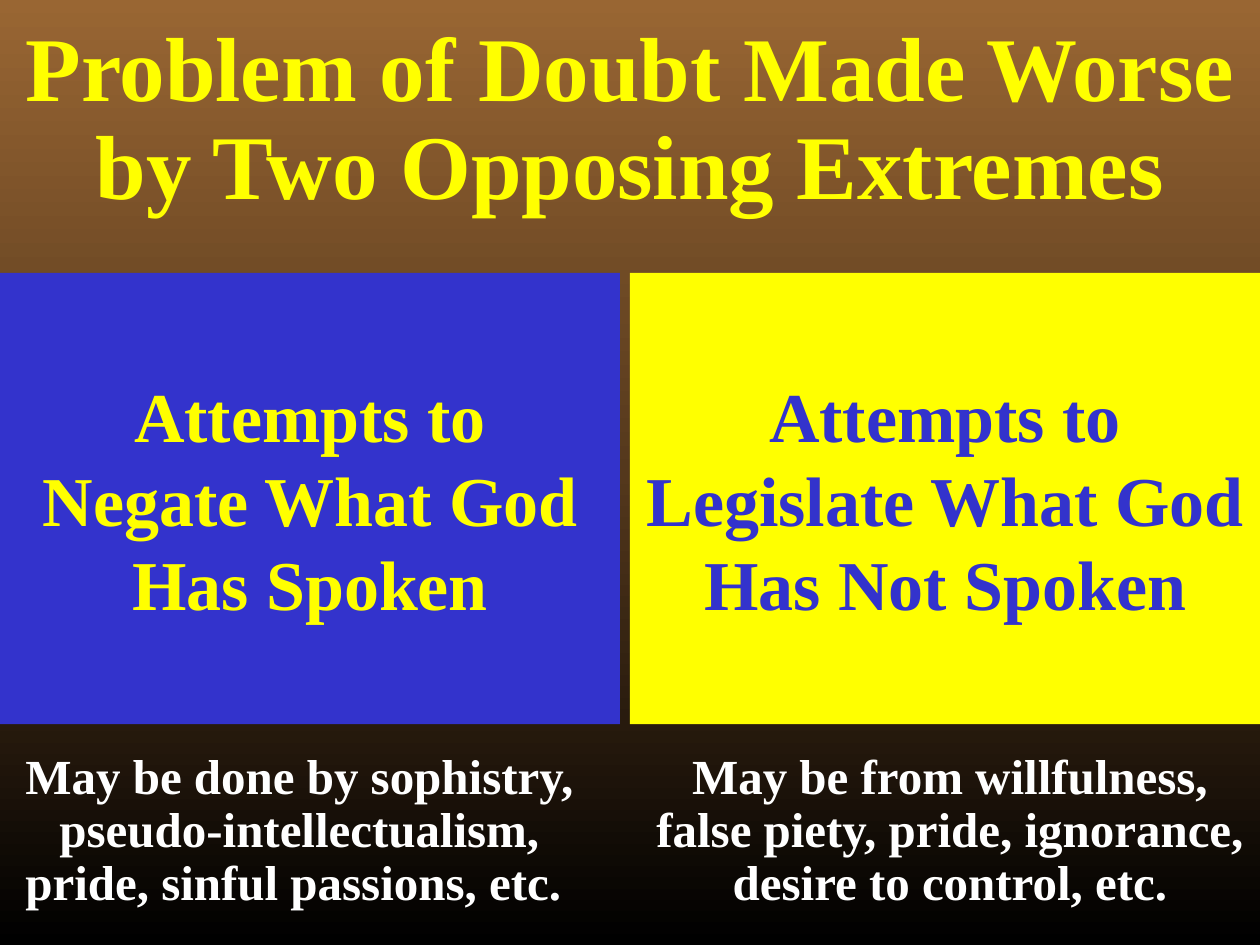
from copy import deepcopy

from lxml.etree import fromstring
from pptx import Presentation
from pptx.dml.color import RGBColor
from pptx.enum.shapes import MSO_SHAPE
from pptx.enum.text import MSO_ANCHOR, MSO_AUTO_SIZE, PP_ALIGN
from pptx.util import Cm, Pt

COLORS = {"brown": "996633", "umber": "54381C", "black": "000000",
          "yellow": "FFFF00", "blue": "3333CC", "white": "FFFFFF"}
SHADOW = """<a:effectLst xmlns:a="http://schemas.openxmlformats.org/drawingml/2006/main">
<a:outerShdw blurRad="0" dist="63500" dir="2700000" algn="tl">
<a:srgbClr val="000000"/></a:outerShdw></a:effectLst>"""


def tone(name):
    return RGBColor.from_string(COLORS[name])


class Deck:
    """Holds the text style and the current slide."""
    face = "Times New Roman"

    def __init__(self, wide, high):
        self.prs = Presentation()
        self.prs.slide_width, self.prs.slide_height = Cm(wide), Cm(high)
        self.slide = self.prs.slides.add_slide(self.prs.slide_layouts[5])

    def shade(self, *names):
        """Fill the background with even stops from top to bottom."""
        fill = self.slide.background.fill
        fill.gradient()
        fill.gradient_angle = 270
        first = fill.gradient_stops[0]._gs
        first.addnext(deepcopy(first))
        for i, (stop, name) in enumerate(zip(fill.gradient_stops, names)):
            stop.position = i / (len(names) - 1)
            stop.color.rgb = tone(name)

    def style(self, font, size, color):
        font.name, font.size, font.bold = self.face, Pt(size), True
        font.color.rgb = tone(color)

    def label(self, frame, lines, size, color, gap=None):
        frame.text = "\n".join(lines)
        for para in frame.paragraphs:
            para.alignment = PP_ALIGN.CENTER
            para.line_spacing = gap
            self.style(para.font, size, color)

    def title(self, text, box, size, color):
        shape = self.slide.shapes.title
        shape.left, shape.top, shape.width, shape.height = map(Cm, box)
        frame = shape.text_frame
        frame.vertical_anchor = MSO_ANCHOR.MIDDLE
        frame.auto_size = MSO_AUTO_SIZE.NONE
        self.label(frame, [text], size, color, 0.9)
        font = frame.paragraphs[0].runs[0].font
        self.style(font, size, color)
        font._element.solidFill.addnext(fromstring(SHADOW))

    def panel(self, lines, box, fill, color):
        shape = self.slide.shapes.add_shape(MSO_SHAPE.RECTANGLE, *map(Cm, box))
        shape.shadow.inherit = False
        shape.fill.solid()
        shape.fill.fore_color.rgb = tone(fill)
        shape.line.fill.background()
        frame = shape.text_frame
        frame.word_wrap = False
        frame.vertical_anchor = MSO_ANCHOR.MIDDLE
        self.label(frame, lines, 40, color)

    def note(self, text, box):
        frame = self.slide.shapes.add_textbox(*map(Cm, box)).text_frame
        frame.word_wrap = True
        frame.auto_size = MSO_AUTO_SIZE.SHAPE_TO_FIT_TEXT
        self.label(frame, [text], 28, "white", 0.9)


def main():
    deck = Deck(25.4, 19.05)
    deck.shade("brown", "umber", "black")
    deck.title("Problem of Doubt Made Worse by Two Opposing Extremes",
               (0, 0, 25.4, 4.88), 52, "yellow")
    deck.panel(["Attempts to", "Negate What God", "Has Spoken"],
               (0, 5.5, 12.5, 9.1), "blue", "yellow")
    deck.panel(["Attempts to", "Legislate What God", "Has Not Spoken"],
               (12.7, 5.5, 12.7, 9.1), "yellow", "blue")
    deck.note("May be done by sophistry, pseudo-intellectualism, "
              "pride, sinful passions, etc. ", (0, 15.04, 12.07, 3.46))
    deck.note("May be from willfulness, false piety, pride, ignorance, "
              "desire to control, etc.", (12.9, 15.04, 12.5, 3.46))
    deck.prs.save("out.pptx")


if __name__ == "__main__":
    main()
